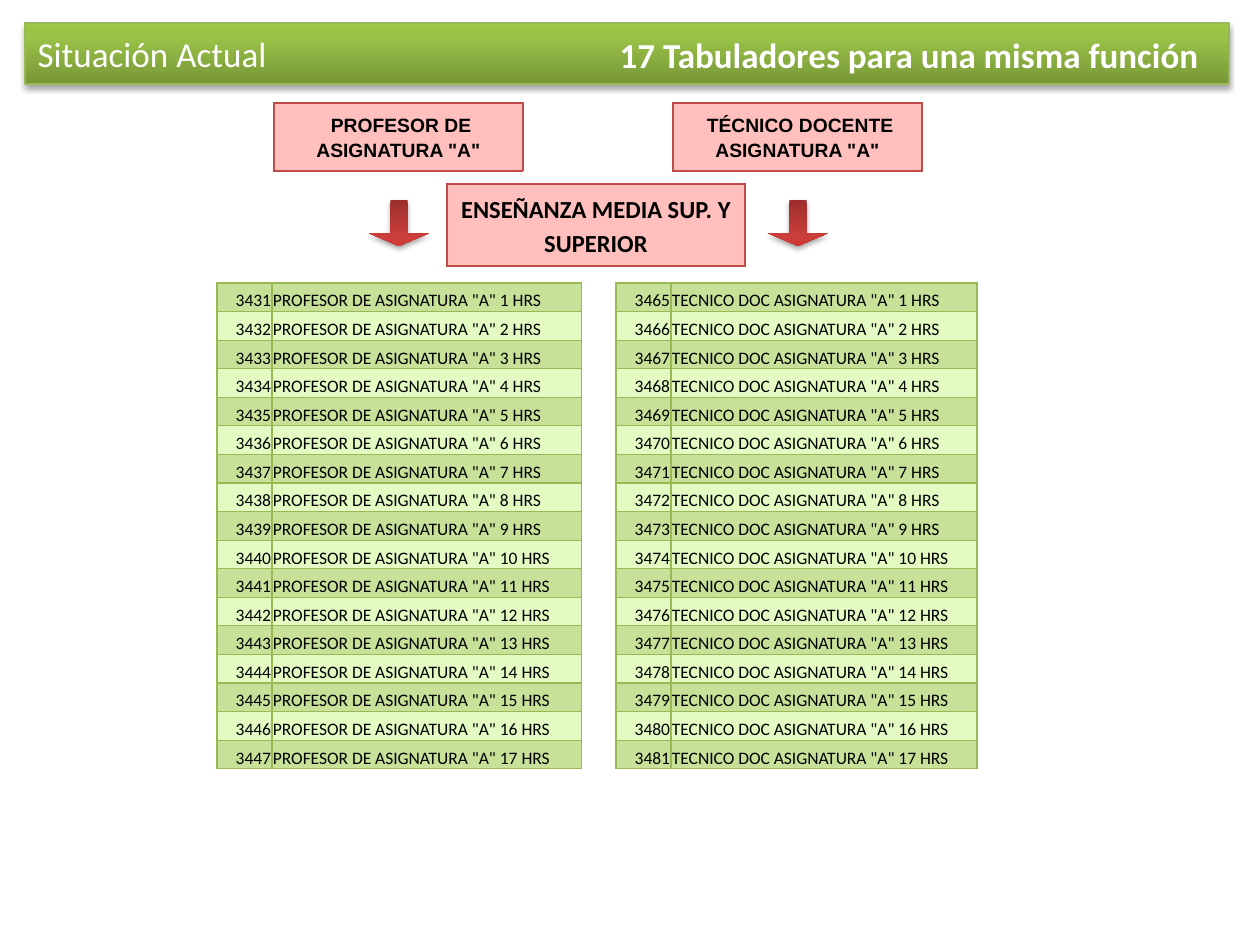
from copy import deepcopy
from dataclasses import dataclass
from lxml.etree import SubElement as Sub
from pptx import Presentation
from pptx.dml.color import RGBColor as Rgb
from pptx.enum.shapes import MSO_SHAPE as Kind
from pptx.enum.text import MSO_ANCHOR as Anchor, MSO_AUTO_SIZE as Fit, PP_ALIGN as Align
from pptx.oxml.ns import qn
from pptx.util import Emu, Pt

SCALE = 914400 / 126
HOURS = 17


@dataclass(frozen=True)
class Theme:
    sans: str = "Calibri"
    label: str = "Arial"
    white: str = "FFFFFF"
    black: str = "000000"
    green: str = "98B955"
    red: str = "BF4C48"
    pink: str = "FFBFBD"
    bands: tuple = ("C7E199", "E3FBC2")
    bar: tuple = ("779737", "9BC348", "9DC746")
    arrow: tuple = ("9C2F2D", "CB3E3A", "CE3B37")
    head: int = 20
    level: int = 14
    role: int = 11
    row: int = 10


THEME = Theme()


def px(num):
    return Emu(round(num * SCALE))


def box(*nums):
    return [px(num) for num in nums]


def style(para, size, color, face=THEME.sans, bold=False, align=Align.LEFT):
    para.alignment = align
    font = para.font
    font.name, font.size, font.bold = face, Pt(size), bold
    font.color.rgb = Rgb.from_string(color)


def shade(shape, colors):
    fill = shape.fill
    fill.gradient()
    fill.gradient_angle = 90
    stops = shape._element.spPr.find(".//" + qn("a:gsLst"))
    stops.append(deepcopy(stops[-1]))
    for stop, color, place in zip(fill.gradient_stops, colors, (0, 0.8, 1)):
        stop.color.rgb = Rgb.from_string(color)
        stop.position = place


def drop(shape):
    shape.shadow.inherit = False
    group = shape._element.spPr.find(qn("a:effectLst"))
    outer = Sub(group, qn("a:outerShdw"), blurRad=str(Pt(3.1)), dist=str(Pt(1.8)),
                dir="5400000", rotWithShape="0")
    color = Sub(outer, qn("a:srgbClr"), val=THEME.black)
    Sub(color, qn("a:alpha"), val="35000")


def edge(cell, color):
    props = cell._tc.get_or_add_tcPr()
    for side in ("L", "R", "T", "B"):
        line = Sub(props, qn("a:ln" + side), w=str(Pt(0.75)))
        fill = Sub(line, qn("a:solidFill"))
        Sub(fill, qn("a:srgbClr"), val=color)


def paint(cell, text, fill, line, pads, anchor):
    cell.text = text
    cell.margin_left, cell.margin_top, cell.margin_right, cell.margin_bottom = box(*pads)
    cell.vertical_anchor = anchor
    edge(cell, line)
    cell.fill.solid()
    cell.fill.fore_color.rgb = Rgb.from_string(fill)
    return cell.text_frame.paragraphs[0]


def grid(slide, rows, cols, place):
    table = slide.shapes.add_table(rows, cols, *box(*place)).table
    table.first_row = table.horz_banding = False
    return table


def card(slide, text, place, size, face):
    cell = grid(slide, 1, 1, place).cell(0, 0)
    para = paint(cell, text, THEME.pink, THEME.red, (6, 0, 6, 0), Anchor.MIDDLE)
    style(para, size, THEME.black, face, True, Align.CENTER)
    para.line_spacing = 1.15


def roster(slide, left, wide, first, role):
    code = 55
    table = grid(slide, HOURS, 2, (left, 283, code + wide, 486))
    for col, width in zip(table.columns, (code, wide)):
        col.width = px(width)
    for row in range(HOURS):
        texts = (str(first + row), f'{role} ASIGNATURA "A" {row + 1} HRS')
        for col, (text, align) in enumerate(zip(texts, (Align.RIGHT, Align.LEFT))):
            para = paint(table.cell(row, col), text, THEME.bands[row % 2],
                         THEME.green, (1, 1, 1, 0), Anchor.BOTTOM)
            style(para, THEME.row, THEME.black, align=align)


def arrow(slide, left):
    shape = slide.shapes.add_shape(Kind.UP_ARROW, *box(left, 200, 60, 46))
    shape.rotation = 180
    shape.adjustments[0], shape.adjustments[1] = 0.29, 0.28
    shade(shape, THEME.arrow)
    shape.line.fill.background()
    drop(shape)


def banner(slide, text):
    title = slide.shapes.title
    title.left, title.top, title.width, title.height = box(25, 23, 1204, 61)
    shade(title, THEME.bar)
    title.line.color.rgb = Rgb.from_string(THEME.green)
    title.line.width = Pt(0.75)
    drop(title)
    frame = title.text_frame
    frame.text = text
    frame.auto_size, frame.word_wrap = Fit.NONE, False
    frame.vertical_anchor = Anchor.MIDDLE
    style(frame.paragraphs[0], THEME.head, THEME.white)


def claim(slide, text):
    frame = slide.shapes.add_textbox(*box(547, 27, 664, 55)).text_frame
    frame.text = text
    frame.word_wrap = True
    frame.auto_size = Fit.SHAPE_TO_FIT_TEXT
    style(frame.paragraphs[0], THEME.head, THEME.white, bold=True, align=Align.RIGHT)


def main():
    deck = Presentation()
    deck.slide_width, deck.slide_height = box(1260, 945)
    slide = deck.slides.add_slide(deck.slide_layouts[5])
    banner(slide, "Situación Actual")
    claim(slide, "17 Tabuladores para una misma función")
    groups = (
        (217, 310, 3431, "PROFESOR DE", ' PROFESOR DE ASIGNATURA "A"'),
        (616, 306, 3465, "TECNICO DOC", ' TÉCNICO DOCENTE ASIGNATURA "A"'),
    )
    for left, wide, first, role, name in groups:
        card(slide, name, (left + 57, 103, 249, 68), THEME.role, THEME.label)
        arrow(slide, left + 152)
        roster(slide, left, wide, first, role)
    card(slide, "ENSEÑANZA MEDIA SUP. Y SUPERIOR", (447, 184, 298, 82),
         THEME.level, THEME.sans)
    deck.save("out.pptx")


if __name__ == "__main__":
    main()
